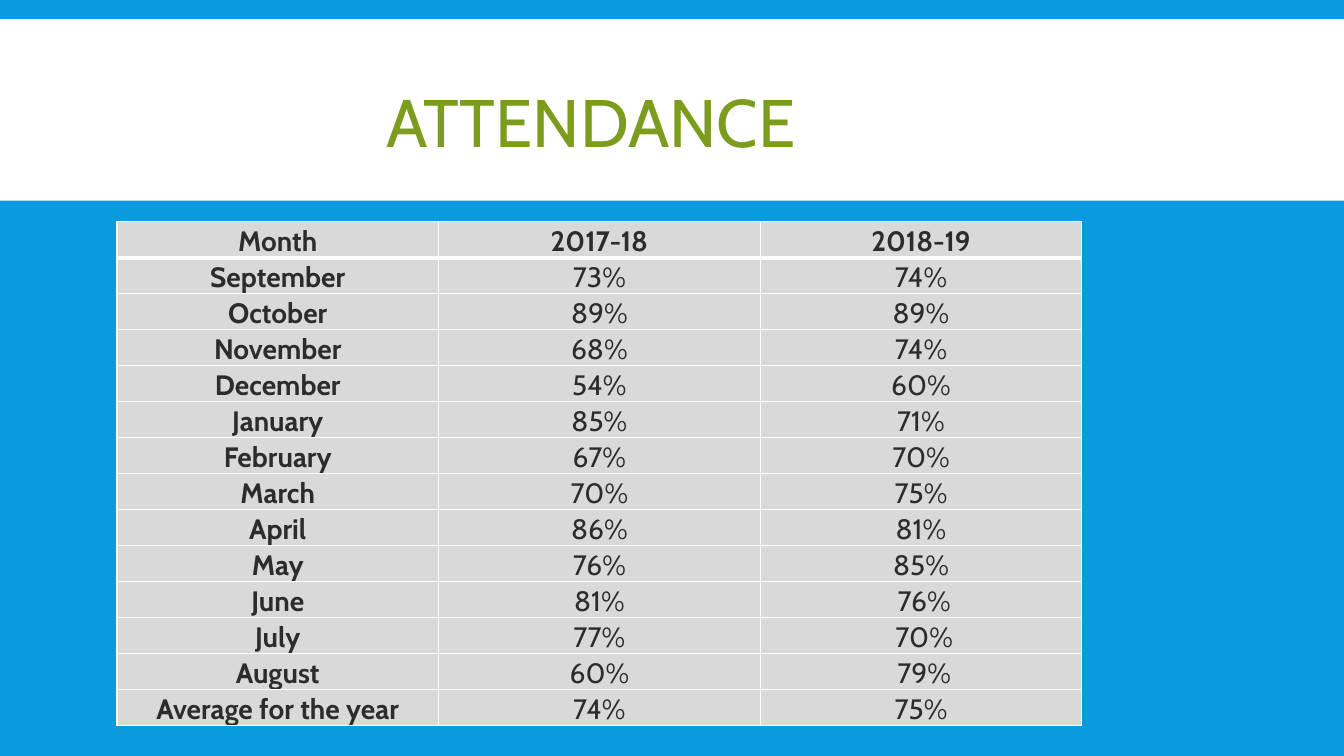
from dataclasses import dataclass

from lxml import etree
from pptx import Presentation
from pptx.dml.color import RGBColor
from pptx.enum.shapes import MSO_SHAPE
from pptx.enum.text import MSO_ANCHOR, PP_ALIGN
from pptx.oxml.ns import qn
from pptx.slide import Slide
from pptx.table import _Cell
from pptx.text.text import _Paragraph
from pptx.util import Inches, Pt

BLUE = RGBColor(0x09, 0x9B, 0xDD)
WHITE = RGBColor(0xFF, 0xFF, 0xFF)
GREEN = RGBColor(0x7C, 0x9C, 0x1E)
GREY = RGBColor(0xD9, 0xD9, 0xD9)
DARK = RGBColor(0x2C, 0x2C, 0x2C)
CENTER = PP_ALIGN.CENTER
MIDDLE = MSO_ANCHOR.MIDDLE
RECTANGLE = MSO_SHAPE.RECTANGLE
FONT = "Cabin"
LEFT = Inches(1.16)
COLUMN_WIDTH = Inches(3.19)
ROW_HEIGHT = Inches(0.33)
THIN = Pt(1)
THICK = Pt(3)


@dataclass(frozen=True)
class AttendanceRow:
    month: str
    first_year: str
    second_year: str


ATTENDANCE = [
    AttendanceRow("Month", "2017-18", "2018-19"),
    AttendanceRow("September", "73%", "74%"),
    AttendanceRow("October", "89%", "89%"),
    AttendanceRow("November", "68%", "74%"),
    AttendanceRow("December", "54%", "60%"),
    AttendanceRow("January", "85%", "71%"),
    AttendanceRow("February", "67%", "70%"),
    AttendanceRow("March", "70%", "75%"),
    AttendanceRow("April", "86%", "81%"),
    AttendanceRow("May", "76%", "85%"),
    AttendanceRow("June", "81%", " 76%"),
    AttendanceRow("July", "77%", " 70%"),
    AttendanceRow("August", "60%", " 79%"),
    AttendanceRow("Average for the year", "74%", "75%"),
]


def write_centered(paragraph: _Paragraph, text: str, size: int, color: RGBColor,
                   spacing: float, bold: bool = False) -> None:
    paragraph.alignment = CENTER
    paragraph.line_spacing = spacing
    run = paragraph.add_run()
    run.text = text
    run.font.name = FONT
    run.font.size = Pt(size)
    run.font.bold = bold
    run.font.color.rgb = color


def add_borders(cell: _Cell, top: int, bottom: int) -> None:
    properties = cell._tc.get_or_add_tcPr()
    for side, width in (("L", THIN), ("R", THIN), ("T", top), ("B", bottom)):
        line = etree.SubElement(properties, qn(f"a:ln{side}"), w=str(width))
        fill = etree.SubElement(line, qn("a:solidFill"))
        etree.SubElement(fill, qn("a:srgbClr"), val=str(WHITE))


def add_heading(slide: Slide) -> None:
    band = slide.shapes.add_shape(RECTANGLE, 0, Inches(0.19), Inches(13.33), Inches(1.8))
    band.shadow.inherit = False
    band.fill.solid()
    band.fill.fore_color.rgb = WHITE
    band.line.fill.background()

    title = slide.shapes.add_textbox(LEFT, Inches(0.54), Inches(9.4), Inches(1.44))
    frame = title.text_frame
    frame.word_wrap = True
    frame.vertical_anchor = MIDDLE
    write_centered(frame.paragraphs[0], "ATTENDANCE", 48, GREEN, 0.85)


def add_attendance(slide: Slide, rows: list[AttendanceRow]) -> None:
    table = slide.shapes.add_table(
        len(rows), 3, LEFT, Inches(2.2), 3 * COLUMN_WIDTH, len(rows) * ROW_HEIGHT
    ).table
    for column in table.columns:
        column.width = COLUMN_WIDTH
    for r, row in enumerate(rows):
        table.rows[r].height = ROW_HEIGHT
        for c, text in enumerate((row.month, row.first_year, row.second_year)):
            cell = table.cell(r, c)
            cell.margin_left = cell.margin_right = Inches(0.07)
            cell.margin_top = cell.margin_bottom = 0
            add_borders(cell, THICK if r == 1 else THIN, THICK if r == 0 else THIN)
            cell.fill.solid()
            cell.fill.fore_color.rgb = GREY
            write_centered(cell.text_frame.paragraphs[0], text, 20, DARK, 1.07,
                           bold=r == 0 or c == 0)


def main() -> None:
    presentation = Presentation()
    presentation.slide_width = Inches(13.33)
    presentation.slide_height = Inches(7.5)
    slide = presentation.slides.add_slide(presentation.slide_layouts[6])
    slide.background.fill.solid()
    slide.background.fill.fore_color.rgb = BLUE
    add_heading(slide)
    add_attendance(slide, ATTENDANCE)
    presentation.save("out.pptx")


if __name__ == "__main__":
    main()
